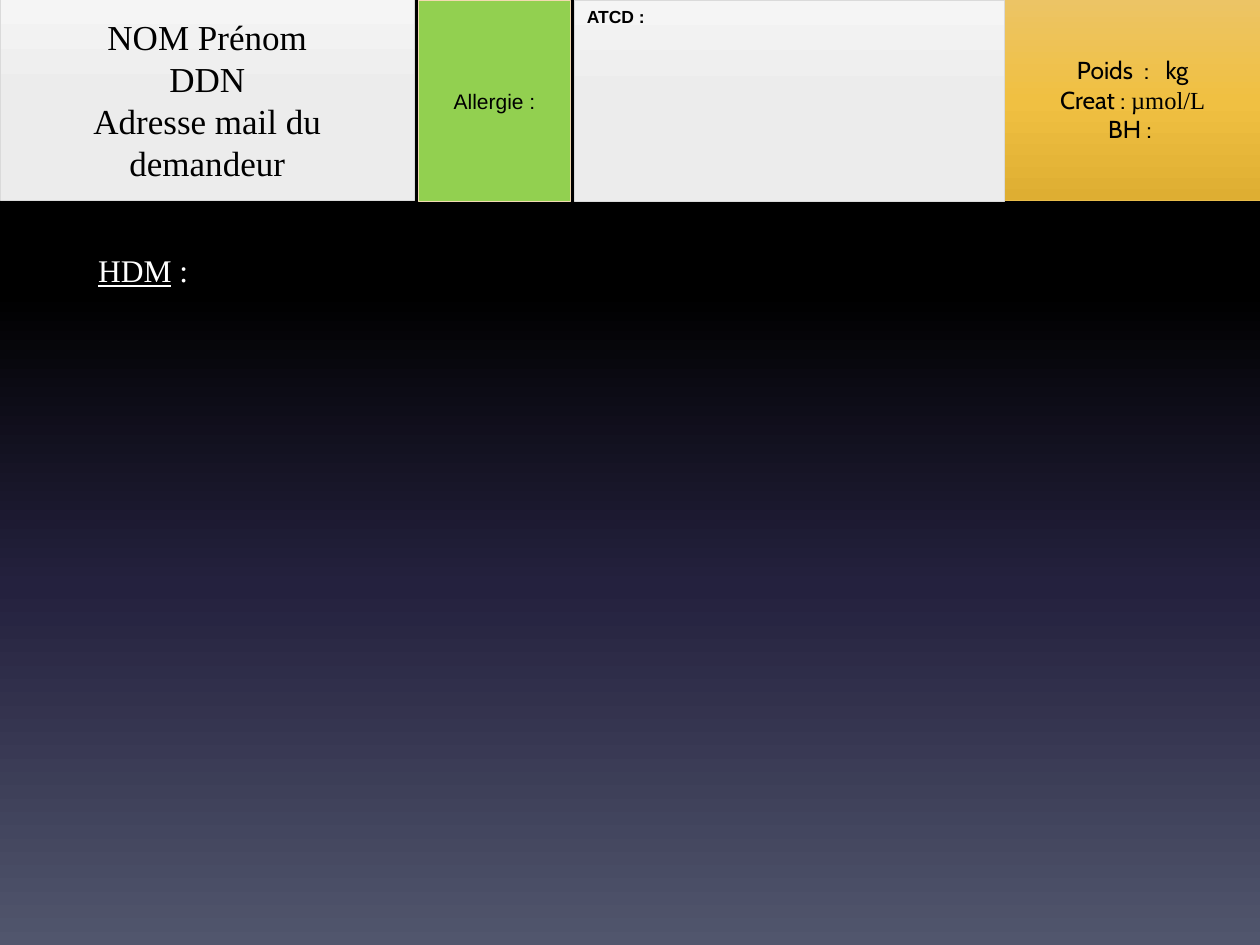
import lxml.etree
import pptx
import pptx.dml.color
import pptx.enum.shapes
import pptx.enum.text
import pptx.oxml.ns
import pptx.util

Inches = pptx.util.Inches
Pt = pptx.util.Pt
Align = pptx.enum.text.PP_ALIGN
Anchor = pptx.enum.text.MSO_ANCHOR
qn = pptx.oxml.ns.qn

COLORS = {
    "black": "000000",
    "white": "FFFFFF",
    "navy": "24213E",
    "slate": "51566D",
    "green": "92D050",
    "cream": "F2DAB1",
    "edge": "DADADA",
    "gold": "E8BC4A",
}
NIGHT = [(0, COLORS["black"]), (31, COLORS["black"]),
         (62, COLORS["navy"]), (100, COLORS["slate"])]
GREY = [(0, "F5F5F5"), (50, "ECECEC"), (100, "EAEAEA")]
AMBER = [(0, "ECC465"), (50, "F0C042"), (100, "DEAE32")]
SERIF = "Times New Roman"


def rgb(name):
    return pptx.dml.color.RGBColor.from_string(COLORS[name])


class Board:
    def __init__(self, deck):
        self.slide = deck.slides.add_slide(deck.slide_layouts[6])

    def blend(self, fill, root, stops):
        fill.gradient()
        fill.gradient_angle = 270
        items = root.find(".//" + qn("a:gsLst"))
        for old in list(items):
            items.remove(old)
        for place, color in stops:
            stop = lxml.etree.SubElement(items, qn("a:gs"), pos=str(place * 1000))
            lxml.etree.SubElement(stop, qn("a:srgbClr"), val=color)

    def backdrop(self, stops):
        self.blend(self.slide.background.fill, self.slide.element, stops)

    def add_text(self, frame, lines, size, color, align):
        frame.word_wrap = True
        for index, runs in enumerate(lines):
            para = frame.add_paragraph() if index else frame.paragraphs[0]
            para.alignment = align
            for text, font, *marks in runs:
                run = para.add_run()
                run.text = text
                run.font.name = font
                run.font.size = Pt(size)
                run.font.color.rgb = rgb(color)
                run.font.bold = "bold" in marks
                run.font.underline = "under" in marks

    def panel(self, left, top, width, fill, edge, lines, size,
              align=Align.CENTER, anchor=Anchor.MIDDLE):
        shape = self.slide.shapes.add_shape(
            pptx.enum.shapes.MSO_SHAPE.RECTANGLE,
            Inches(left), Inches(top), Inches(width), Inches(1.6))
        shape.shadow.inherit = False
        if isinstance(fill, str):
            shape.fill.solid()
            shape.fill.fore_color.rgb = rgb(fill)
        else:
            self.blend(shape.fill, shape.element, fill)
        shape.line.color.rgb = rgb(edge)
        shape.line.width = Pt(0.5)
        shape.text_frame.vertical_anchor = anchor
        self.add_text(shape.text_frame, lines, size, "black", align)

    def label(self, left, top, width, height, lines, size):
        box = self.slide.shapes.add_textbox(
            Inches(left), Inches(top), Inches(width), Inches(height))
        self.add_text(box.text_frame, lines, size, "white", Align.LEFT)
        box.text_frame.auto_size = pptx.enum.text.MSO_AUTO_SIZE.SHAPE_TO_FIT_TEXT


def main():
    deck = pptx.Presentation()
    deck.slide_width = Inches(10)
    deck.slide_height = Inches(7.5)
    board = Board(deck)
    board.backdrop(NIGHT)
    board.panel(7.96, -0.01, 2.06, AMBER, "gold", [
        [("Poids  :   kg", "Cabin")],
        [("Creat : ", "Cabin"), ("µmol/L", SERIF)],
        [("BH : ", "Cabin")],
    ], 14)
    board.panel(4.56, 0, 3.41, GREY, "edge", [[("ATCD :", "Arial", "bold")]],
                10, Align.LEFT, Anchor.TOP)
    board.panel(0, -0.01, 3.29, GREY, "edge", [
        [("NOM Prénom", SERIF)],
        [("DDN", SERIF)],
        [("Adresse mail du demandeur", SERIF)],
    ], 20)
    board.panel(3.32, 0, 1.21, "green", "cream", [[("Allergie :", "Arial")]], 12)
    board.label(0.68, 1.94, 8.65, 1.01,
                [[("HDM", SERIF, "under"), (" :", SERIF)]], 18)
    deck.save("out.pptx")


if __name__ == "__main__":
    main()
